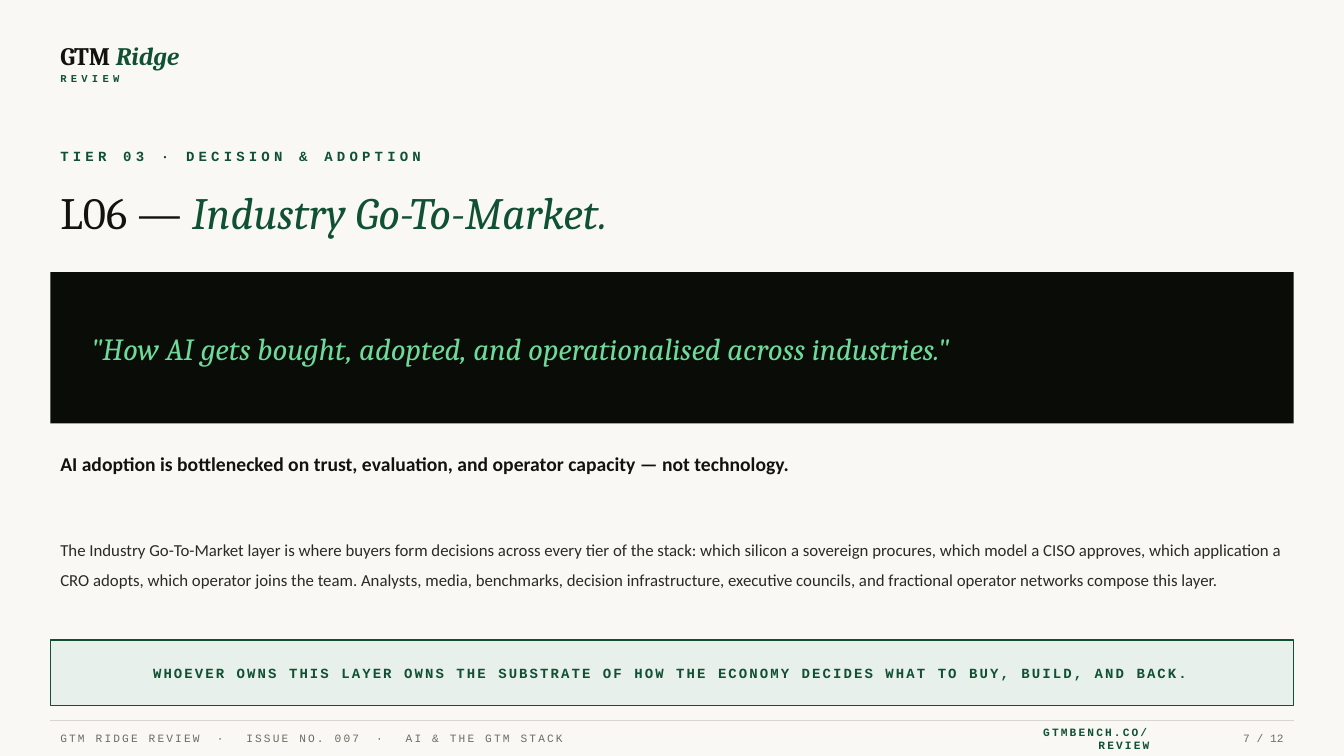
import pptx
import pptx.dml.color
import pptx.enum.shapes
import pptx.enum.text
import pptx.oxml
import pptx.util

RGBColor = pptx.dml.color.RGBColor
Align = pptx.enum.text.PP_ALIGN
PX = 9144

PAPER = RGBColor(0xFA, 0xF8, 0xF4)
INK = RGBColor(0x12, 0x13, 0x0F)
GREEN = RGBColor(0x0F, 0x51, 0x32)
NIGHT = RGBColor(0x0A, 0x0C, 0x08)
MINT = RGBColor(0x6F, 0xD9, 0x9A)
PROSE = RGBColor(0x2A, 0x2B, 0x25)
PALE = RGBColor(0xE8, 0xF0, 0xEB)
RULE = RGBColor(0xD9, 0xD6, 0xCF)
GREY = RGBColor(0x6B, 0x6D, 0x63)

SERIF = "Cambria"
SANS = "Calibri"
MONO = "Courier New"


def scale(*sizes):
    return [pptx.util.Emu(size * PX) for size in sizes]


def write(slide, box, *parts, size, font, color=INK, bold=False, italic=False,
          track=0, align=Align.LEFT, lead=None, holder=None):
    shape = holder or slide.shapes.add_textbox(*scale(*box))
    shape.left, shape.top, shape.width, shape.height = scale(*box)
    frame = shape.text_frame
    frame.word_wrap = True
    frame.auto_size = pptx.enum.text.MSO_AUTO_SIZE.NONE
    frame.vertical_anchor = pptx.enum.text.MSO_ANCHOR.MIDDLE
    line = frame.paragraphs[0]
    line.alignment = align
    if lead:
        line.line_spacing = lead
    for part in parts:
        text, style = part if isinstance(part, tuple) else (part, {})
        run = line.add_run()
        run.text = text
        run.font.size = pptx.util.Pt(size)
        run.font.name = font
        run.font.bold = bold
        run.font.italic = style.get("italic", italic)
        run.font.color.rgb = style.get("color", color)
        space = style.get("track", track)
        if space:
            run.font._element.set("spc", str(round(space * 100)))


def panel(slide, box, fill, edge=None):
    shape = slide.shapes.add_shape(
        pptx.enum.shapes.MSO_SHAPE.RECTANGLE, *scale(*box))
    shape.shadow.inherit = False
    shape.fill.solid()
    shape.fill.fore_color.rgb = fill
    if edge is None:
        shape.line.fill.background()
    else:
        shape.line.color.rgb = edge
        shape.line.width = pptx.util.Pt(1)


def masthead(slide, x, y):
    accent = {"color": GREEN, "italic": True}
    write(slide, (x, y, 300, 40), "GTM ", ("Ridge", accent),
          size=18, font=SERIF, bold=True)
    write(slide, (x, y + 33, 200, 20), "REVIEW",
          size=7.5, font=MONO, color=GREEN, bold=True, track=3)


def heading(slide, x, y, wide):
    write(slide, (x, y, wide, 30), "TIER 03 · DECISION & ADOPTION",
          size=10, font=MONO, color=GREEN, bold=True, track=3)
    accent = {"color": GREEN, "italic": True}
    write(slide, (x, y + 35, wide, 70), "L06 — ",
          ("Industry Go-To-Market.", accent),
          size=32, font=SERIF, holder=slide.shapes.title)


def quote(slide, x, y, wide, high):
    panel(slide, (x, y, wide, high), NIGHT)
    write(slide, (x + 30, y + 15, wide - 63, high - 30),
          '"How AI gets bought, adopted, and operationalised across industries."',
          size=22, font=SERIF, color=MINT, italic=True)


def story(slide, x, y, wide):
    write(slide, (x, y, wide, 40),
          "AI adoption is bottlenecked on trust, evaluation, and operator "
          "capacity — not technology.", size=14, font=SANS, bold=True)
    write(slide, (x, y + 45, wide, 140),
          "The Industry Go-To-Market layer is where buyers form decisions "
          "across every tier of the stack: which silicon a sovereign procures, "
          "which model a CISO approves, which application a CRO adopts, which "
          "operator joins the team. Analysts, media, benchmarks, decision "
          "infrastructure, executive councils, and fractional operator "
          "networks compose this layer.",
          size=12, font=SANS, color=PROSE, lead=1.5)


def callout(slide, x, y, wide, high):
    panel(slide, (x, y, wide, high), PALE, GREEN)
    write(slide, (x + 20, y + 5, wide - 43, high - 10),
          "WHOEVER OWNS THIS LAYER OWNS THE SUBSTRATE OF HOW THE ECONOMY "
          "DECIDES WHAT TO BUY, BUILD, AND BACK.",
          size=10, font=MONO, color=GREEN, bold=True, track=1.5,
          align=Align.CENTER)


def footer(slide, x, y, wide):
    rule = slide.shapes.add_connector(
        pptx.enum.shapes.MSO_CONNECTOR.STRAIGHT, *scale(x, y, x + wide, y))
    rule.line.color.rgb = RULE
    rule.line.width = pptx.util.Pt(0.75)
    rule._element.spPr.append(pptx.oxml.parse_xml(
        '<a:effectLst xmlns:a='
        '"http://schemas.openxmlformats.org/drawingml/2006/main"/>'))
    top, high = y + 5, 25
    dot = (" · ", {"track": 5.7})
    write(slide, (x, top, 800, high), "GTM RIDGE REVIEW", dot,
          "ISSUE NO. 007", dot, "AI & THE GTM STACK",
          size=8, font=MONO, color=GREY, track=1.5)
    write(slide, (x + wide - 133, top, 133, high), "7 / 12",
          size=8, font=MONO, color=GREY, align=Align.RIGHT)
    write(slide, (x + wide - 283, top, 150, high), "GTMBENCH.CO/REVIEW",
          size=8, font=MONO, color=GREEN, bold=True, track=1.5,
          align=Align.RIGHT)


def main():
    deck = pptx.Presentation()
    deck.slide_width, deck.slide_height = scale(1333, 750)
    slide = deck.slides.add_slide(deck.slide_layouts.get_by_name("Title Only"))
    slide.background.fill.solid()
    slide.background.fill.fore_color.rgb = PAPER
    left, wide = 50, 1233
    masthead(slide, left, 35)
    heading(slide, left, 140, wide)
    quote(slide, left, 270, wide, 150)
    story(slide, left, 440, wide)
    callout(slide, left, 635, wide, 65)
    footer(slide, left, 715, wide)
    deck.save("out.pptx")


if __name__ == "__main__":
    main()
